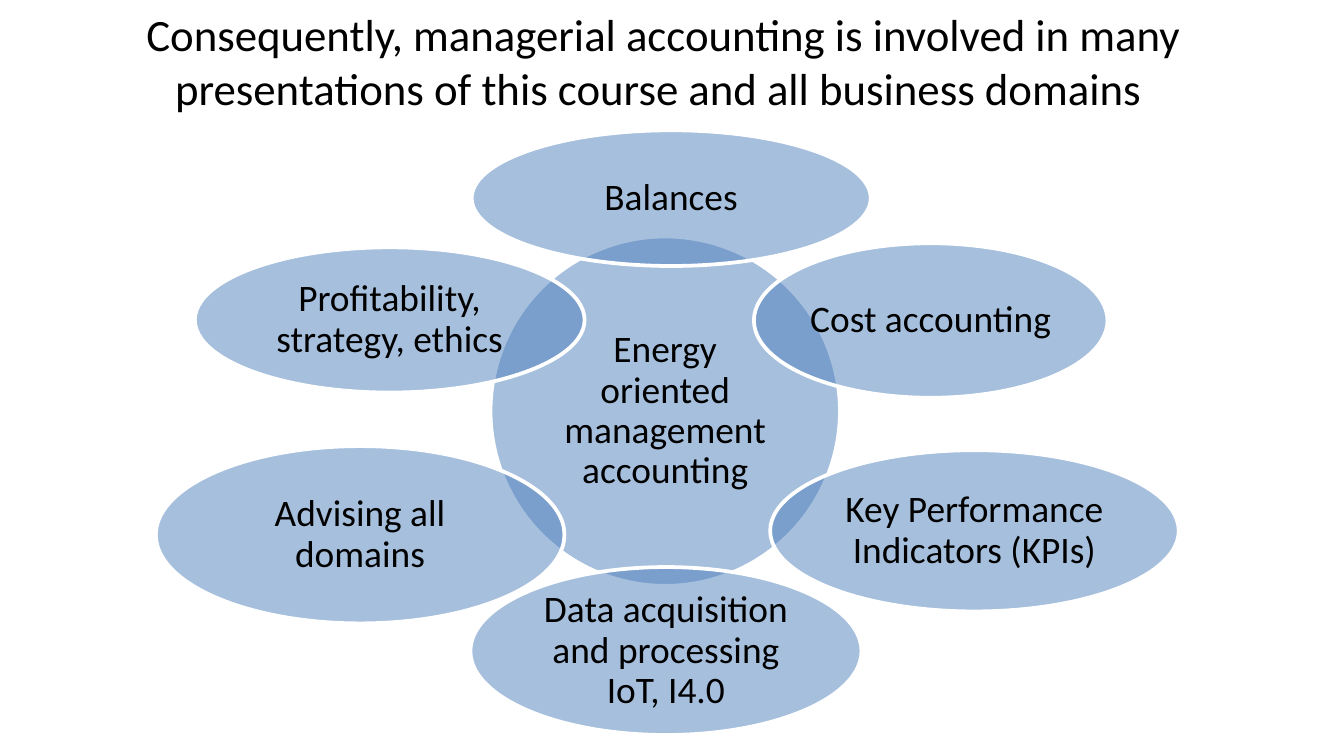
"""Builds a slide of business domains overlapping energy oriented management accounting."""
from lxml import etree
from pptx import Presentation
from pptx.dml import color
from pptx.enum import shapes, text
from pptx.oxml import ns
from pptx.util import Pt

COLOURS = {"domain": "4F81BD", "outline": "FFFFFF", "text": "000000"}
FONT = "Calibri"
TITLE = ("Consequently, managerial accounting is involved in many "
         "presentations of this course and all business domains ")
DOMAINS = [
    ("Energy oriented management accounting", 262.8, 126.7, 187.2, 187.2),
    ("Balances", 252.7, 69.8, 213.8, 72.7),
    ("Cost accounting", 403.9, 130.3, 189.4, 82.8),
    ("Key Performance Indicators (KPIs)", 412.6, 241.2, 218.9, 86.4),
    ("Data acquisition and processing IoT, I4.0", 252, 303.8, 209.5, 90),
    ("Advising all domains", 83.5, 239, 218.9, 95),
    ("Profitability, strategy, ethics", 104.4, 132.5, 208.8, 77.8),
]


def rgb(name):
    return color.RGBColor.from_string(COLOURS[name])


def write(frame, wording, size, spacing=1.0):
    frame.word_wrap = True
    frame.text = wording
    paragraph = frame.paragraphs[0]
    paragraph.alignment = text.PP_ALIGN.CENTER
    paragraph.line_spacing = spacing
    for run in paragraph.runs:
        run.font.name = FONT
        run.font.size = Pt(size)
        run.font.color.rgb = rgb("text")


def set_opacity(shape, percent):
    fill_colour = shape.fill._xPr.find(ns.qn("a:solidFill"))[0]
    etree.SubElement(fill_colour, ns.qn("a:alpha"), val=str(percent * 1000))


def add_title(slide):
    title = slide.shapes.add_textbox(Pt(19.4), Pt(0), Pt(671.8), Pt(65.5))
    write(title.text_frame, TITLE, 24)


def add_domain(slide, wording, left, top, width, height):
    domain = slide.shapes.add_shape(
        shapes.MSO_SHAPE.OVAL, Pt(left), Pt(top), Pt(width), Pt(height))
    domain.shadow.inherit = False
    domain.fill.solid()
    domain.fill.fore_color.rgb = rgb("domain")
    set_opacity(domain, 50)
    domain.line.color.rgb = rgb("outline")
    domain.line.width = Pt(2)
    frame = domain.text_frame
    frame.margin_left = frame.margin_right = Pt(2)
    frame.margin_top = frame.margin_bottom = Pt(2)
    frame.vertical_anchor = text.MSO_ANCHOR.MIDDLE
    write(frame, wording, 20, 0.9)


def main():
    deck = Presentation()
    deck.slide_width, deck.slide_height = Pt(720), Pt(405)
    slide = deck.slides.add_slide(deck.slide_layouts[6])
    for domain in DOMAINS:
        add_domain(slide, *domain)
    add_title(slide)
    deck.save("out.pptx")


if __name__ == "__main__":
    main()
